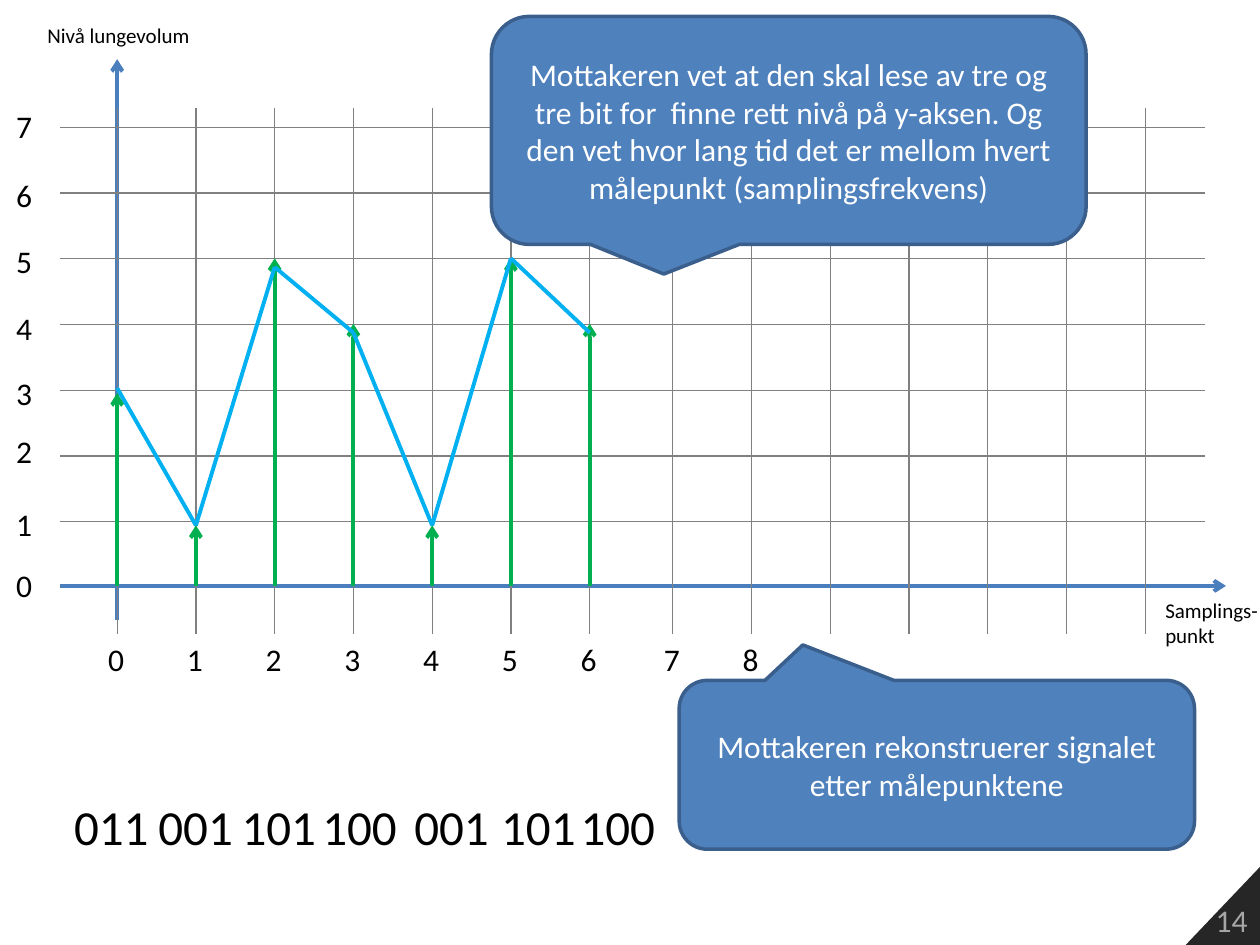
from pptx import Presentation
from pptx.dml.color import RGBColor
from pptx.enum.shapes import MSO_CONNECTOR as CONN, MSO_SHAPE as SHAPE
from pptx.enum.text import MSO_ANCHOR as ANCHOR, MSO_AUTO_SIZE as AUTO, PP_ALIGN as ALIGN
from pptx.oxml.ns import qn
from pptx.util import Inches, Pt
from lxml import etree

COLORS = {
    "text": "000000", "white": "FFFFFF", "axis": "4B7EBC", "grid": "808080",
    "sample": "00B050", "curve": "00B0F0", "callout": "4F81BD",
    "outline": "3A5F8C", "corner": "262626", "number": "A6A6A6",
}

X0, STEP_X = 0.93, 0.625
AXIS_Y, LEVEL_1, LEVEL_7 = 4.65, 4.14, 1.01
# The grid's right half starts a little further along than the left half ends.
GRID_X = [start + STEP_X * i for start in (X0, 5.34) for i in range(7)]
GRID_Y = [LEVEL_1 + (LEVEL_7 - LEVEL_1) * i / 6 for i in range(7)]
LEVEL_LABEL_TOPS = [4.44, 3.96, 3.38, 2.92, 2.4, 1.87, 1.35, 0.8]

# Per sample: bits, left edge of the bits, arrow tip, height of the curve
SAMPLES = [
    ("011", 0.49, 3.12, 3.08),
    ("001", 1.16, 4.17, 4.17),
    ("101", 1.82, 2.05, 2.12),
    ("100", 2.46, 2.57, 2.64),
    ("001", 3.19, 4.17, 4.17),
    ("101", 3.88, 2.05, 2.05),
    ("100", 4.51, 2.57, 2.64),
]


def rgb(name):
    return RGBColor.from_string(COLORS[name])


def write(tf, text, size=18, color="text", align=ALIGN.LEFT, font="Calibri"):
    """Fill a text frame, one paragraph for each line of text."""
    for i, line in enumerate(text.split("\n")):
        p = tf.add_paragraph() if i else tf.paragraphs[0]
        p.alignment = align
        r = p.add_run()
        r.text = line
        r.font.name, r.font.size = font, Pt(size)
        r.font.color.rgb = rgb(color)


class Canvas:
    def __init__(self, slide):
        self.shapes = slide.shapes

    def line(self, x1, y1, x2, y2, color, width=2.25, arrow=False):
        c = self.shapes.add_connector(
            CONN.STRAIGHT, Inches(x1), Inches(y1), Inches(x2), Inches(y2))
        c.line.color.rgb = rgb(color)
        c.line.width = Pt(width)
        sp_pr = c._element.spPr
        if arrow:
            etree.SubElement(sp_pr.find(qn("a:ln")), qn("a:tailEnd"), type="arrow")
        etree.SubElement(sp_pr, qn("a:effectLst"))

    def label(self, x, y, w, h, text, **fmt):
        tf = self.shapes.add_textbox(
            Inches(x), Inches(y), Inches(w), Inches(h)).text_frame
        tf.word_wrap = False
        tf.auto_size = AUTO.SHAPE_TO_FIT_TEXT
        write(tf, text, **fmt)

    def callout(self, x, y, w, h, text, tip):
        """Rounded speech bubble; tip is its offset from the centre in widths and heights."""
        sp = self.shapes.add_shape(SHAPE.ROUNDED_RECTANGULAR_CALLOUT,
                                   Inches(x), Inches(y), Inches(w), Inches(h))
        sp.adjustments[0], sp.adjustments[1] = tip
        sp.shadow.inherit = False
        sp.fill.solid()
        sp.fill.fore_color.rgb = rgb("callout")
        sp.line.color.rgb = rgb("outline")
        sp.line.width = Pt(2)
        sp.text_frame.word_wrap = True
        sp.text_frame.vertical_anchor = ANCHOR.MIDDLE
        write(sp.text_frame, text, color="white", align=ALIGN.CENTER)

    def corner(self, number):
        """Dark triangle in the bottom right corner with the page number."""
        builder = self.shapes.build_freeform(Inches(9.41), Inches(7.5))
        builder.add_line_segments(
            [(Inches(10), Inches(6.88)), (Inches(10), Inches(7.5))], close=True)
        sp = builder.convert_to_shape()
        sp.shadow.inherit = False
        sp.fill.solid()
        sp.fill.fore_color.rgb = rgb("corner")
        sp.line.fill.background()
        sp.text_frame.vertical_anchor = ANCHOR.BOTTOM
        write(sp.text_frame, number, color="number", align=ALIGN.RIGHT)


def main():
    prs = Presentation()
    prs.slide_width, prs.slide_height = Inches(10), Inches(7.5)
    canvas = Canvas(prs.slides.add_slide(prs.slide_layouts[6]))

    canvas.corner("14")
    canvas.line(0.48, AXIS_Y, 9.73, AXIS_Y, "axis", arrow=True)
    canvas.line(X0, 4.92, X0, 0.47, "axis", arrow=True)
    for y in GRID_Y:
        canvas.line(0.48, y, 9.56, y, "grid", width=0.75)
    for x in GRID_X:
        canvas.line(x, 0.86, x, 5.03, "grid", width=0.75)

    for level, top in enumerate(LEVEL_LABEL_TOPS):
        canvas.label(0.03, top, 0.33, 0.4, str(level))
    for i, x in enumerate(GRID_X[:9]):
        canvas.label(x - 0.17, 5.03, 0.33, 0.4, str(i))

    for x, (bits, left, tip, _) in zip(GRID_X, SAMPLES):
        canvas.line(x, AXIS_Y, x, tip, "sample", arrow=True)
        canvas.label(left, 6.27, 0.8, 0.57, bits, size=28)
    points = [(x, sample[3]) for x, sample in zip(GRID_X, SAMPLES)]
    for start, end in zip(points, points[1:]):
        canvas.line(*start, *end, "curve")

    canvas.label(9.15, 4.69, 0.94, 0.5, "Samplings-\npunkt", size=12)
    canvas.label(0.27, 0.13, 1.34, 0.3, "Nivå lungevolum", size=12, align=ALIGN.CENTER)
    canvas.callout(3.9, 0.13, 4.72, 1.81,
                   "Mottakeren vet at den skal lese av tre og tre bit for  finne rett "
                   "nivå på y-aksen. Og den vet hvor lang tid det er mellom hvert "
                   "målepunkt (samplingsfrekvens)", tip=(-0.21, 0.63))
    canvas.callout(5.39, 5.4, 4.09, 1.34,
                   "Mottakeren rekonstruerer signalet etter målepunktene",
                   tip=(-0.26, -0.71))

    prs.save("out.pptx")


if __name__ == "__main__":
    main()
